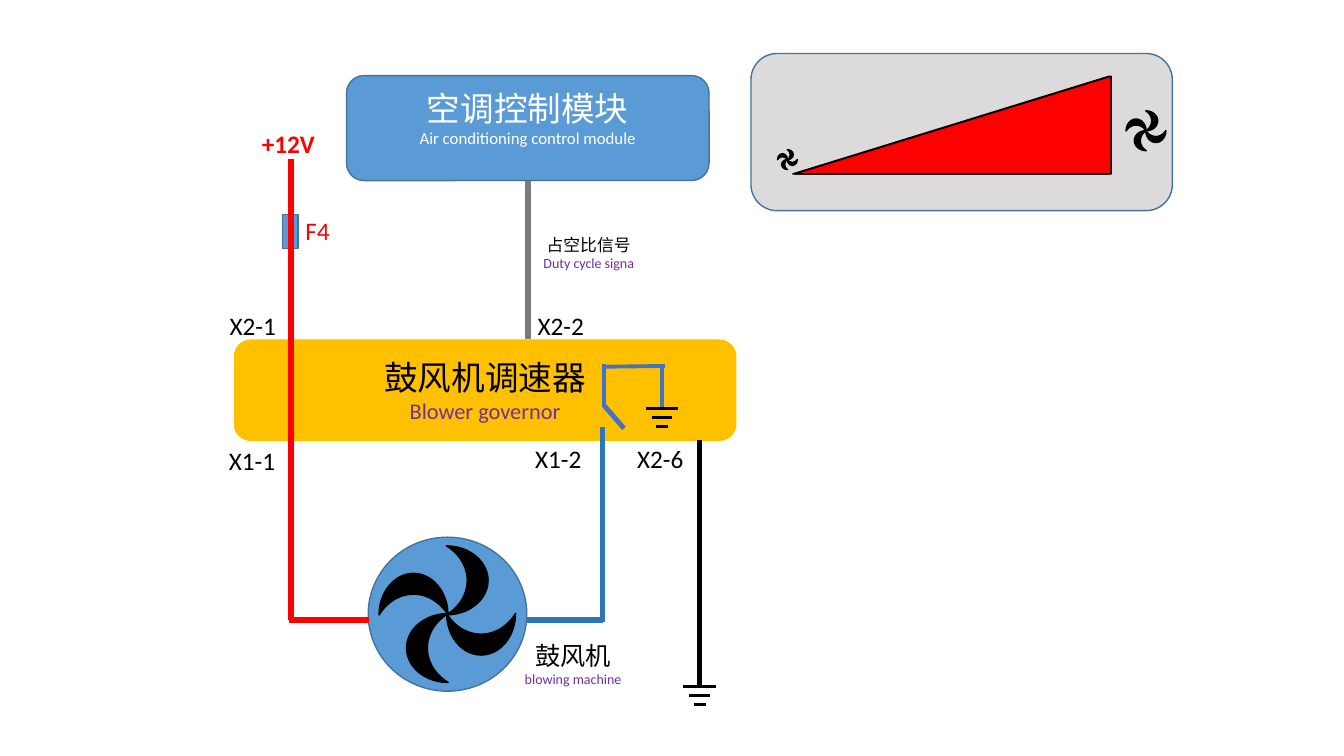
from math import cos, radians, sin

from lxml.etree import SubElement
from pptx import Presentation
from pptx.dml.color import RGBColor
from pptx.enum.shapes import MSO_CONNECTOR as Connector
from pptx.enum.shapes import MSO_SHAPE as Shape
from pptx.enum.text import MSO_ANCHOR as Anchor
from pptx.enum.text import MSO_AUTO_SIZE as AutoSize
from pptx.enum.text import PP_ALIGN as Align
from pptx.oxml.ns import qn
from pptx.util import Pt

BLACK = "000000"
WHITE = "FFFFFF"
RED = "FF0000"
BLUE = "5B9BD5"
OUTLINE = "43739E"
PURPLE = "7030A0"
MOTOR_BLUE = "2E75B6"
SWITCH_BLUE = "4472C4"


def color(code):
    return RGBColor.from_string(code)


class Diagram:
    font = "Calibri"

    def __init__(self, page):
        self.page = page

    def shape(self, kind, left, top, width, height, fill, line=None, rotation=0, parent=None):
        owner = parent or self.page
        shape = owner.shapes.add_shape(kind, Pt(left), Pt(top), Pt(width), Pt(height))
        shape.shadow.inherit = False
        shape.rotation = rotation
        shape.fill.solid()
        shape.fill.fore_color.rgb = color(fill)
        if line:
            shape.line.color.rgb = color(line)
            shape.line.width = Pt(1)
        else:
            shape.line.fill.background()
        return shape

    def add_lines(self, frame, lines, align):
        for index, (text, size, code, bold) in enumerate(lines):
            para = frame.add_paragraph() if index else frame.paragraphs[0]
            para.alignment = align
            span = para.add_run()
            span.text = text
            span.font.name = self.font
            span.font.size = Pt(size)
            span.font.bold = bold
            span.font.color.rgb = color(code)

    def module(self, left, top, width, height, fill, line, lines, bottom=3.6):
        box = self.shape(Shape.ROUNDED_RECTANGLE, left, top, width, height, fill, line)
        frame = box.text_frame
        frame.vertical_anchor = Anchor.MIDDLE
        frame.margin_bottom = Pt(bottom)
        self.add_lines(frame, lines, Align.CENTER)
        return box

    def label(self, left, top, width, height, lines, align=Align.LEFT, wrap=False):
        box = self.page.shapes.add_textbox(Pt(left), Pt(top), Pt(width), Pt(height))
        frame = box.text_frame
        frame.word_wrap = wrap
        frame.auto_size = AutoSize.NONE if wrap else AutoSize.SHAPE_TO_FIT_TEXT
        self.add_lines(frame, lines, align)

    def wire(self, x1, y1, x2, y2, code, width=4):
        wire = self.page.shapes.add_connector(Connector.STRAIGHT, Pt(x1), Pt(y1), Pt(x2), Pt(y2))
        wire.line.color.rgb = color(code)
        wire.line.width = Pt(width)
        SubElement(wire.element.spPr, qn("a:effectLst"))
        return wire

    def ground(self, x, y):
        for step, half in enumerate((11.5, 7.3, 4.3)):
            level = y + 6.5 * step
            self.wire(x - half, level, x + half, level, BLACK, 2)

    def fan(self, x, y, blade_width, blade_height):
        group = self.page.shapes.add_group_shape()
        out, up = 0.48 * blade_width, 0.49 * blade_height
        for angle in (0, 90, 180, 270):
            turn = radians(angle)
            center_x = x + out * cos(turn) + up * sin(turn)
            center_y = y + out * sin(turn) - up * cos(turn)
            blade = self.shape(
                Shape.MOON, center_x - blade_width / 2, center_y - blade_height / 2,
                blade_width, blade_height, BLACK, BLACK, angle, group)
            blade.element.spPr.find(qn("a:xfrm")).set("flipH", "1")

    def wedge(self, left, top, width, height, fill):
        self.shape(Shape.RIGHT_TRIANGLE, left + (width - height) / 2, top + (height - width) / 2,
                   height, width, fill, BLACK, 270)


def main():
    deck = Presentation()
    deck.slide_width, deck.slide_height = Pt(960), Pt(540)
    page = deck.slides.add_slide(deck.slide_layouts[6])
    diagram = Diagram(page)

    diagram.shape(Shape.RECTANGLE, 201.8, 153.4, 11, 24, BLUE, OUTLINE)
    diagram.module(167, 242.5, 359, 72.5, "FFC000", None, [
        ("鼓风机调速器", 24, BLACK, False), ("Blower governor", 16, PURPLE, False)])
    control = diagram.module(247.5, 54, 259, 75, BLUE, OUTLINE, [
        ("空调控制模块", 24, WHITE, False),
        ("Air conditioning control module", 12, WHITE, False)], bottom=18)
    diagram.shape(Shape.OVAL, 263, 383.7, 113.3, 110, BLUE, OUTLINE)
    diagram.fan(319.5, 438.7, 29.8, 49.3)

    supply_x, motor_x, ground_x, motor_y = 207.8, 430.5, 499.7, 442.8
    diagram.wire(supply_x, motor_y, supply_x, 113.8, RED)
    diagram.wire(206.5, motor_y, 263.5, motor_y, RED)
    diagram.wire(motor_x, motor_y, 376.5, motor_y, MOTOR_BLUE)
    diagram.wire(motor_x, 305.3, motor_x, 444.3, MOTOR_BLUE)
    diagram.wire(ground_x, 314.6, ground_x, 490.3, BLACK)
    diagram.ground(ground_x, 490.3)
    signal = diagram.wire(377, 129, 377, 242.5, "7C7C7C")
    signal.begin_connect(control, 2)

    diagram.wire(431.3, 260, 431.3, 290, SWITCH_BLUE, 2.75)
    diagram.wire(445.7, 306, 431.3, 289.4, SWITCH_BLUE, 3.5)
    diagram.wire(473, 260.6, 473, 291.6, SWITCH_BLUE, 2.75)
    diagram.wire(475, 261.4, 430.3, 262, SWITCH_BLUE, 2.75)
    diagram.ground(473, 291.6)

    for text, left, top, code, bold in (
        ("+12V", 180, 88, RED, True),
        ("X2-1", 157, 218.3, BLACK, False),
        ("X2-2", 377, 218.3, BLACK, False),
        ("X1-1", 156.4, 314.8, BLACK, False),
        ("X1-2", 375.2, 313.4, BLACK, False),
        ("X2-6", 448, 313.4, BLACK, False),
    ):
        diagram.label(left, top, 56.8 if bold else 52.6, 29, [(text, 18, code, bold)])
    diagram.label(211, 150.5, 42, 19, [("F4", 18, RED, False)], wrap=True)
    diagram.label(381, 164, 79, 34, [
        ("占空比信号", 12, BLACK, False), ("Duty cycle signa", 10, PURPLE, False)], Align.CENTER)
    diagram.label(364.3, 453.6, 90, 32.4, [
        ("鼓风机", 18, BLACK, False), ("blowing machine", 10, PURPLE, False)], Align.CENTER, True)

    diagram.shape(Shape.ROUNDED_RECTANGLE, 536.4, 38.2, 301, 112.3, "DCDADA", OUTLINE)
    diagram.fan(562.5, 114, 4.3, 7.2)
    diagram.fan(818.6, 93.4, 8.6, 14.4)
    for left, fill in ((566.3, BLACK), (567.7, RED)):
        diagram.wedge(left, 54.4, 226, 69.8, fill)

    deck.save("out.pptx")


if __name__ == "__main__":
    main()
